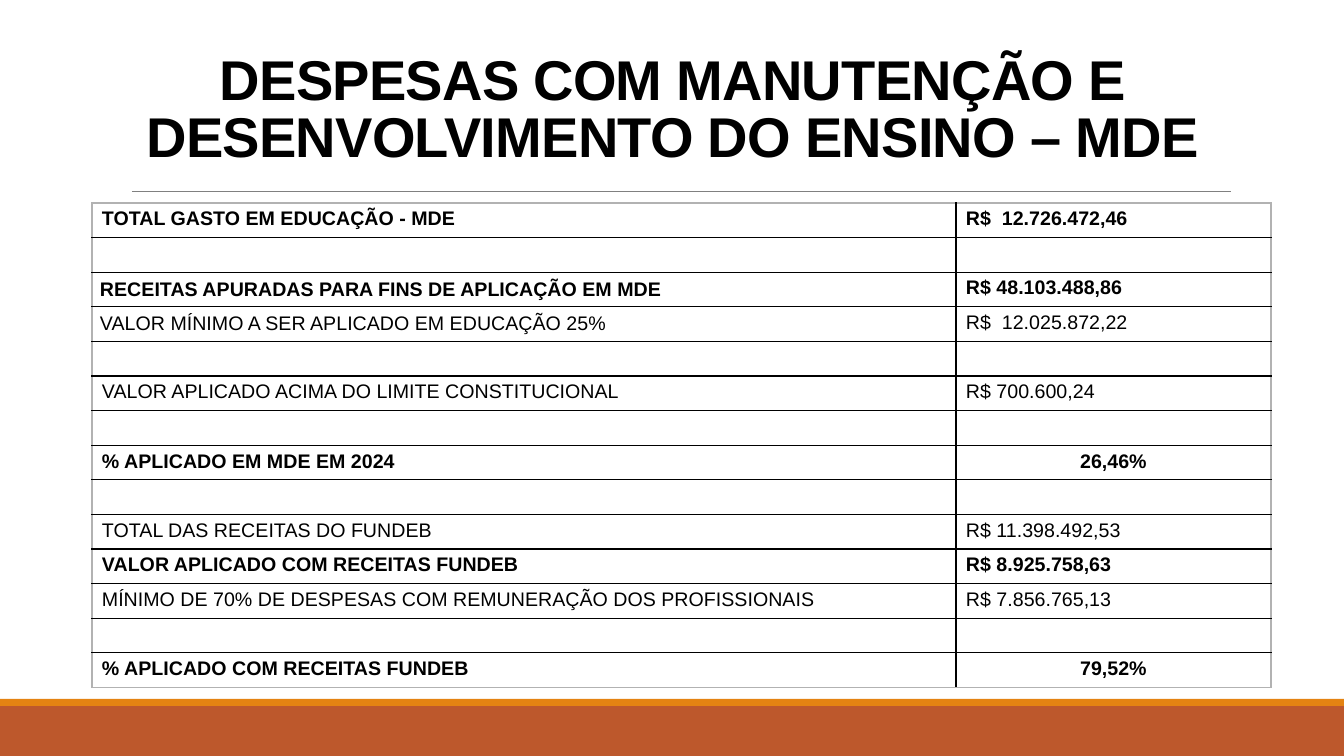
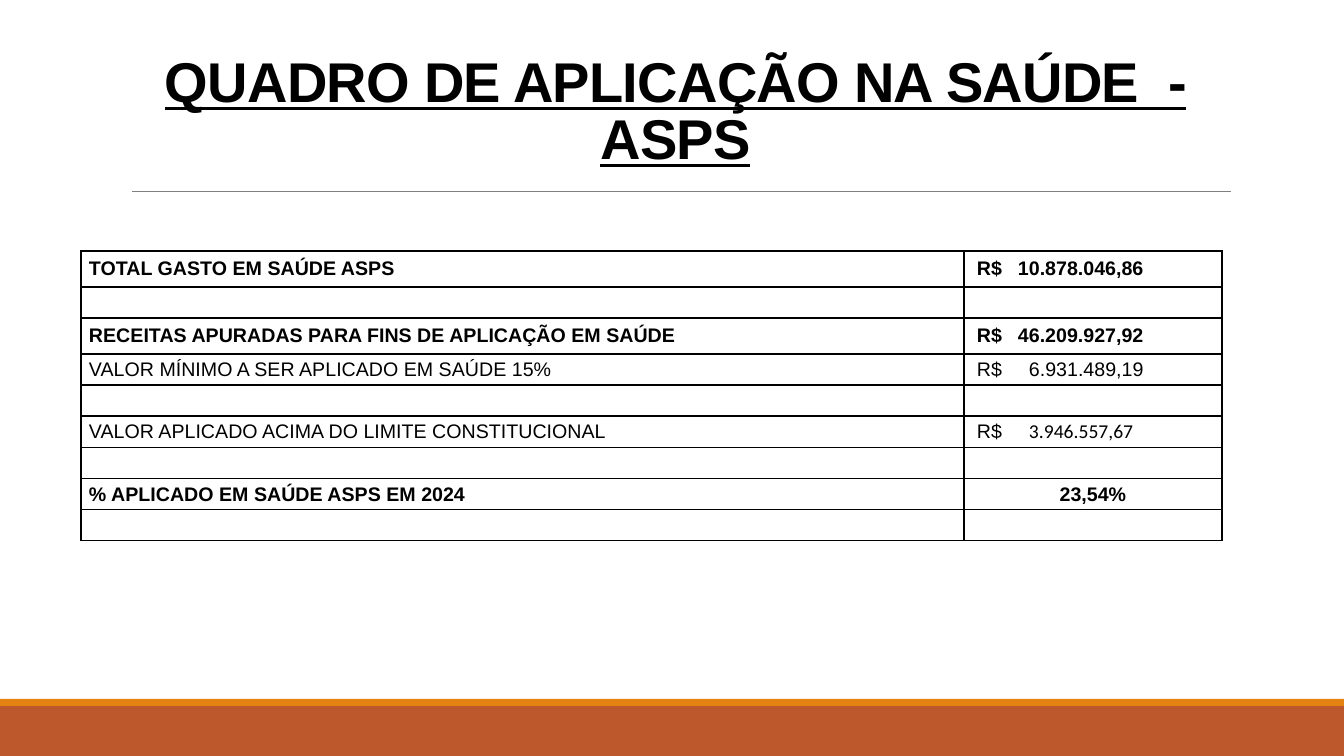
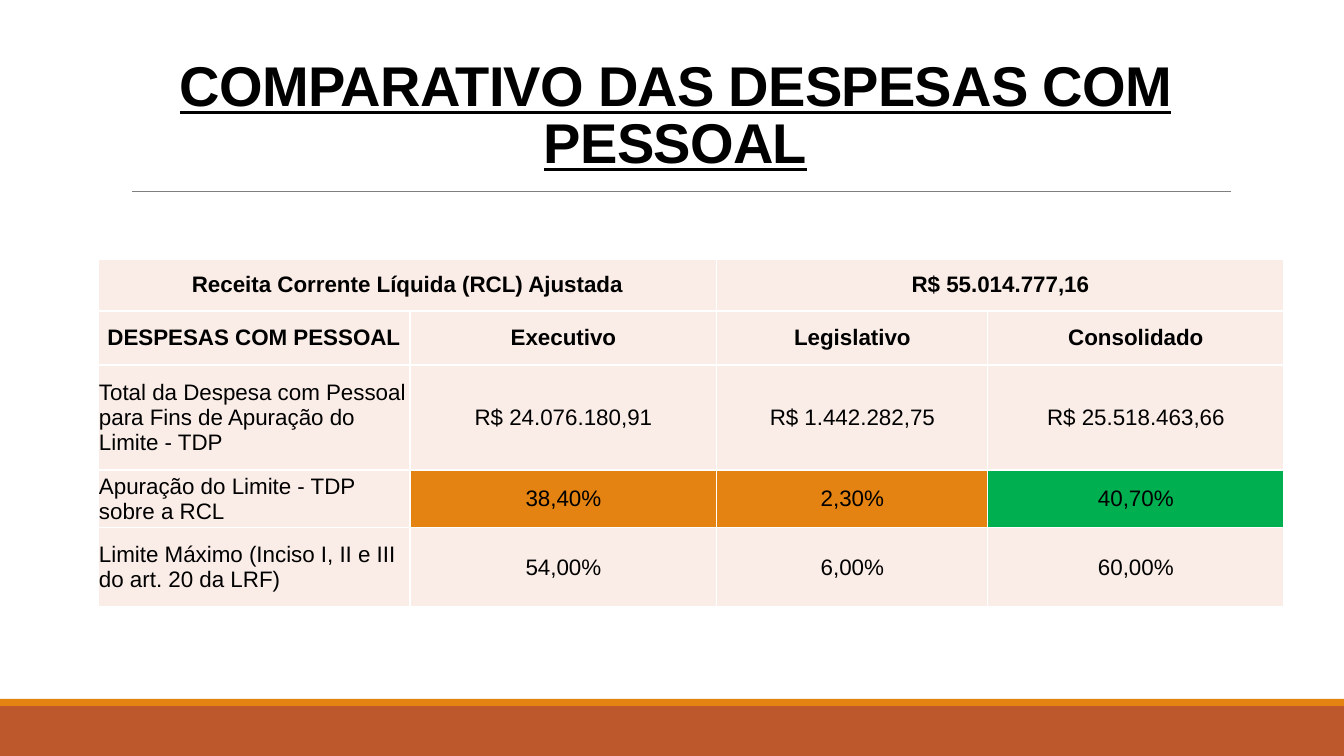
from dataclasses import dataclass

from lxml import etree
from pptx import Presentation
from pptx.dml.color import RGBColor
from pptx.enum.shapes import MSO_CONNECTOR, MSO_SHAPE
from pptx.enum.text import MSO_ANCHOR, MSO_AUTO_SIZE, PP_ALIGN
from pptx.oxml.ns import qn
from pptx.util import Pt

RECTANGLE = MSO_SHAPE.RECTANGLE
STRAIGHT = MSO_CONNECTOR.STRAIGHT
TOP, MIDDLE, BOTTOM = MSO_ANCHOR.TOP, MSO_ANCHOR.MIDDLE, MSO_ANCHOR.BOTTOM
LEFT, CENTER = PP_ALIGN.LEFT, PP_ALIGN.CENTER
NO_AUTOFIT = MSO_AUTO_SIZE.NONE

SLIDE_WIDTH, SLIDE_HEIGHT = 1344, 756
EMU_PER_PX = 12192000 / SLIDE_WIDTH
TITLE_ONLY = 5


@dataclass(frozen=True)
class Theme:
    font: str = "Arial"
    alternate_font: str = "Calibri"
    ink: str = "000000"
    paper: str = "FFFFFF"
    footer: str = "BD582C"
    accent: str = "E48312"
    rule: str = "808080"
    frame: str = "B2B2B2"
    blush: str = "FAEDE7"
    good: str = "00B050"
    title_size: int = 40
    ledger_size: int = 14
    matrix_size: int = 16
    title_leading: float = 0.85
    title_tracking: int = -50
    border: int = 1
    rule_width: float = 0.5


THEME = Theme()


@dataclass(frozen=True)
class Amount:
    figure: str
    tab: int
    font: str = THEME.font


@dataclass(frozen=True)
class Cell:
    content: object = ""
    bold: bool = False
    align: object = LEFT
    fill: str = ""
    anchor: object = MIDDLE
    insets: tuple = (8, 4)
    indent: int = 0
    span: int = 1


BLANK = ("", "", False)

EDUCATION = {
    "title": "DESPESAS COM MANUTENÇÃO E DESENVOLVIMENTO DO ENSINO – MDE",
    "title_box": (118, 32, 1109, 142),
    "underline": False,
    "origin": (92, 203),
    "columns": (864, 315),
    "heights": [485 / 14] * 14,
    "frame": THEME.frame,
    "anchor": TOP,
    "insets": (10, 5),
    "tight_labels": (2, 3),
    "indent": 0,
    "rows": [
        ("TOTAL GASTO EM EDUCAÇÃO - MDE", Amount("12.726.472,46", 36), True),
        BLANK,
        ("RECEITAS APURADAS PARA FINS DE APLICAÇÃO EM MDE", "R$ 48.103.488,86", True),
        ("VALOR MÍNIMO A SER APLICADO EM EDUCAÇÃO 25%", Amount("12.025.872,22", 36), False),
        BLANK,
        ("VALOR APLICADO ACIMA DO LIMITE CONSTITUCIONAL", "R$ 700.600,24", False),
        BLANK,
        ("% APLICADO EM MDE EM 2024", "26,46%", True),
        BLANK,
        ("TOTAL DAS RECEITAS DO FUNDEB", "R$ 11.398.492,53", False),
        ("VALOR APLICADO COM RECEITAS FUNDEB", "R$ 8.925.758,63", True),
        ("MÍNIMO DE 70% DE DESPESAS COM REMUNERAÇÃO DOS PROFISSIONAIS",
         "R$ 7.856.765,13", False),
        BLANK,
        ("% APLICADO COM RECEITAS FUNDEB", "79,52%", True),
    ],
}

HEALTH = {
    "title": "QUADRO DE APLICAÇÃO NA SAÚDE  - ASPS",
    "title_box": (121, 31, 1109, 145),
    "underline": True,
    "origin": (81, 251),
    "columns": (883, 258),
    "heights": [36, 31, 36, 31, 31, 31, 31, 31, 31],
    "frame": THEME.ink,
    "anchor": MIDDLE,
    "insets": (8, 4),
    "tight_labels": (),
    "indent": 5,
    "rows": [
        ("TOTAL GASTO EM SAÚDE ASPS", Amount("10.878.046,86", 41), True),
        BLANK,
        ("RECEITAS APURADAS PARA FINS DE APLICAÇÃO EM SAÚDE",
         Amount("46.209.927,92", 41), True),
        ("VALOR MÍNIMO A SER APLICADO EM SAÚDE 15%", Amount("6.931.489,19", 52), False),
        BLANK,
        ("VALOR APLICADO ACIMA DO LIMITE CONSTITUCIONAL",
         Amount("3.946.557,67", 52, THEME.alternate_font), False),
        BLANK,
        ("% APLICADO EM SAÚDE ASPS EM 2024", "23,54%", True),
        BLANK,
    ],
}

STAFF = {
    "title": "COMPARATIVO DAS DESPESAS COM PESSOAL",
    "title_box": (121, 31, 1109, 149),
    "underline": True,
    "origin": (98, 259),
    "columns": (312, 307, 271, 296),
    "heights": [52, 54, 105, 58, 79],
    "header_rows": 2,
    "rows": [
        ("Receita Corrente Líquida (RCL) Ajustada", None, "R$ 55.014.777,16", None),
        ("DESPESAS COM PESSOAL", "Executivo", "Legislativo", "Consolidado"),
        ("Total da Despesa com Pessoal para Fins de Apuração do Limite - TDP",
         "R$ 24.076.180,91", "R$ 1.442.282,75", "R$ 25.518.463,66"),
        ("Apuração do Limite - TDP sobre a RCL", "38,40%", "2,30%", "40,70%"),
        ("Limite Máximo (Inciso I, II e III do art. 20 da LRF)",
         "54,00%", "6,00%", "60,00%"),
    ],
    "highlights": {(3, 1): THEME.accent, (3, 2): THEME.accent, (3, 3): THEME.good},
}


def px(length):
    return round(length * EMU_PER_PX)


def box(*lengths):
    return tuple(px(length) for length in lengths)


def color(code):
    return RGBColor.from_string(code)


def set_font(font, size, bold, underline=False):
    font.name = THEME.font
    font.size = Pt(size)
    font.bold = bold
    font.underline = underline
    font.color.rgb = color(THEME.ink)


def add_shared_parts(slide, layout):
    for placeholder in list(layout.placeholders):
        if placeholder.placeholder_format.idx:
            layout.shapes.element.remove(placeholder.element)
    bands = [(706, 50, THEME.footer), (699, 7, THEME.accent)]
    parts = []
    for top, height, fill in bands:
        band = slide.shapes.add_shape(RECTANGLE, *box(0, top, SLIDE_WIDTH, height))
        band.shadow.inherit = False
        band.fill.solid()
        band.fill.fore_color.rgb = color(fill)
        band.line.fill.background()
        parts.append(band)
    rule = slide.shapes.add_connector(STRAIGHT, *box(132, 191, 1231, 191))
    rule.line.color.rgb = color(THEME.rule)
    rule.line.width = Pt(THEME.rule_width)
    etree.SubElement(rule.element.spPr, qn("a:effectLst"))
    parts.append(rule)
    for part in parts:
        layout.shapes.element.append(part.element)


def add_title(slide, content):
    title = slide.shapes.title
    title.left, title.top, title.width, title.height = box(*content["title_box"])
    frame = title.text_frame
    frame.word_wrap = True
    frame.auto_size = NO_AUTOFIT
    frame.vertical_anchor = BOTTOM
    paragraph = frame.paragraphs[0]
    paragraph.alignment = CENTER
    paragraph.line_spacing = THEME.title_leading
    set_font(paragraph.font, THEME.title_size, True, content["underline"])
    heading = paragraph.add_run()
    heading.text = content["title"]
    heading._r.get_or_add_rPr().set("spc", str(THEME.title_tracking))


def set_borders(cell, colors):
    properties = cell._tc.get_or_add_tcPr()
    for order, (side, code) in enumerate(zip("LRTB", colors)):
        line = etree.Element(qn(f"a:ln{side}"), w=str(Pt(THEME.border)))
        fill = etree.SubElement(line, qn("a:solidFill"))
        etree.SubElement(fill, qn("a:srgbClr"), val=code)
        properties.insert(order, line)


def set_tab(paragraph, position):
    stops = etree.Element(qn("a:tabLst"))
    etree.SubElement(stops, qn("a:tab"), pos=str(px(position)), algn="l")
    paragraph._p.get_or_add_pPr().insert(0, stops)


def fill_cell(target, cell, size):
    across, down = cell.insets
    target.margin_left = px(across + cell.indent)
    target.margin_right = px(across)
    target.margin_top = target.margin_bottom = px(down)
    target.vertical_anchor = cell.anchor
    if cell.fill:
        target.fill.solid()
        target.fill.fore_color.rgb = color(cell.fill)
    else:
        target.fill.background()
    paragraph = target.text_frame.paragraphs[0]
    paragraph.alignment = cell.align
    set_font(paragraph.font, size, cell.bold)
    if isinstance(cell.content, Amount):
        set_tab(paragraph, cell.content.tab)
        paragraph.add_run().text = "R$\t"
        figure = paragraph.add_run()
        figure.text = cell.content.figure
        if cell.content.font != THEME.font:
            figure.font.name = cell.content.font
    elif cell.content:
        paragraph.add_run().text = cell.content


def add_grid(slide, content, cells, size, inner, outer):
    columns, heights = content["columns"], content["heights"]
    last_row, last_column = len(heights) - 1, len(columns) - 1
    table = slide.shapes.add_table(
        len(heights), len(columns),
        *box(*content["origin"], sum(columns), sum(heights))).table
    table.first_row = table.horz_banding = False
    for column, width in zip(table.columns, columns):
        column.width = px(width)
    for row, height in zip(table.rows, heights):
        row.height = px(height)
    for r, row in enumerate(cells):
        for c, cell in enumerate(row):
            target = table.cell(r, c)
            fill_cell(target, cell, size)
            edges = (c == 0, c == last_column, r == 0, r == last_row)
            set_borders(target, [outer if edge else inner for edge in edges])
            if cell.span > 1:
                target.merge(table.cell(r, c + cell.span - 1))


def ledger_cells(content):
    cells = []
    for r, (label, value, bold) in enumerate(content["rows"]):
        style = {"bold": bold, "anchor": content["anchor"], "insets": content["insets"]}
        label_style = dict(style)
        if r in content["tight_labels"]:
            label_style.update(anchor=MIDDLE, insets=(8, 4))
        percent = isinstance(value, str) and value.endswith("%")
        cells.append([
            Cell(label, **label_style),
            Cell(value, align=CENTER if percent else LEFT,
                 indent=0 if percent else content["indent"], **style),
        ])
    return cells


def matrix_cells(content):
    cells = []
    for r, row in enumerate(content["rows"]):
        header = r < content["header_rows"]
        cells.append([
            Cell(text or "", bold=header, insets=(1, 1),
                 align=CENTER if header or c else LEFT,
                 fill=content["highlights"].get((r, c), THEME.blush),
                 span=2 if row[c + 1:c + 2] == (None,) else 1)
            for c, text in enumerate(row)
        ])
    return cells


def main():
    deck = Presentation()
    deck.slide_width, deck.slide_height = box(SLIDE_WIDTH, SLIDE_HEIGHT)
    layout = deck.slide_layouts[TITLE_ONLY]
    slides = [deck.slides.add_slide(layout) for _ in range(3)]
    add_shared_parts(slides[0], layout)
    for slide, content in zip(slides, (EDUCATION, HEALTH, STAFF)):
        add_title(slide, content)
    for slide, content in zip(slides, (EDUCATION, HEALTH)):
        add_grid(slide, content, ledger_cells(content), THEME.ledger_size,
                 THEME.ink, content["frame"])
    add_grid(slides[2], STAFF, matrix_cells(STAFF), THEME.matrix_size,
             THEME.paper, THEME.paper)
    deck.save("out.pptx")


if __name__ == "__main__":
    main()
